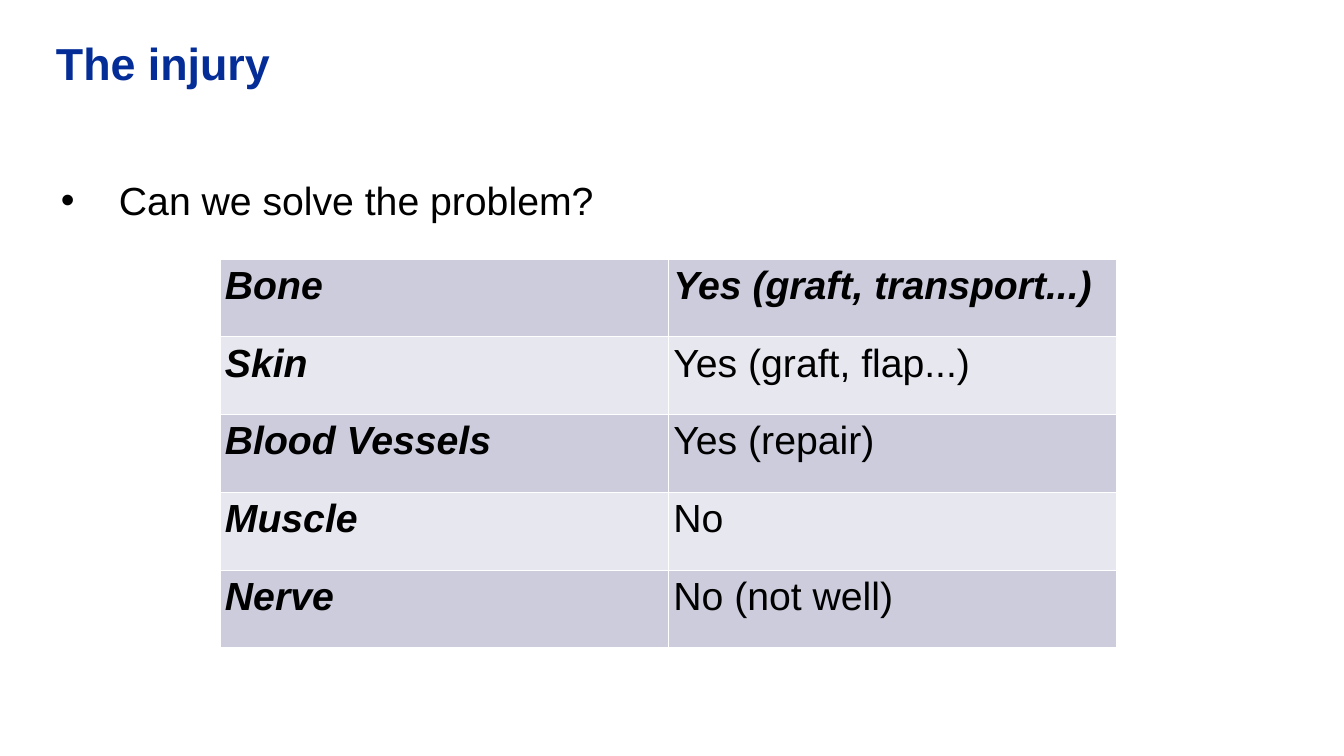
from pptx import Presentation
from pptx.dml.color import RGBColor
from pptx.enum.text import PP_ALIGN as Align
from pptx.oxml.ns import qn
from pptx.util import Emu, Pt
from lxml.etree import SubElement

SLIDE_W, SLIDE_H = 1344, 756
EMU_PER_PX = 914400 / 100.8
PAD = 5
BANDS = ("CCCCDD", "E7E7EF")
TITLE = {"size": Pt(32), "bold": True}
BODY = {"size": Pt(28), "bold": False}
STRONG = {"size": Pt(28), "bold": True, "italic": True}
ROWS = [
    ("Bone", "Yes (graft, transport...)"),
    ("Skin", "Yes (graft, flap...)"),
    ("Blood Vessels", "Yes (repair)"),
    ("Muscle", "No"),
    ("Nerve", "No (not well)"),
]


def px(n):
    return Emu(round(n * EMU_PER_PX))


def rgb(value):
    return RGBColor.from_string(value)


def set_margins(frame, left, top, right, bottom):
    margins = {"left": left, "top": top, "right": right, "bottom": bottom}
    for side, n in margins.items():
        setattr(frame, f"margin_{side}", px(n))


def write(p, text, style, color="000000"):
    r = p.add_run()
    r.text = text
    r.font.name = "Arial"
    r.font.color.rgb = rgb(color)
    for name, value in style.items():
        setattr(r.font, name, value)


def add_text_box(slide, box, margins):
    tf = slide.shapes.add_textbox(*map(px, box)).text_frame
    tf.word_wrap = True
    set_margins(tf, *margins)
    return tf.paragraphs[0]


def add_title(slide, box, text):
    p = add_text_box(slide, box, (0, 0, 0, 0))
    p.line_spacing = 0.9
    write(p, text, TITLE, "042D98")


def add_bullet(slide, box, text, indent=58):
    p = add_text_box(slide, box, (PAD, 9, PAD, PAD))
    pPr = p._p.get_or_add_pPr()
    pPr.set("marL", str(px(indent)))
    pPr.set("indent", str(-px(indent)))
    SubElement(pPr, qn("a:buFont"), typeface="Arial")
    SubElement(pPr, qn("a:buChar"), char="•")
    write(p, text, BODY)


def add_borders(cell, color="FFFFFF"):
    tcPr = cell._tc.get_or_add_tcPr()
    for i, side in enumerate(("lnL", "lnR", "lnT", "lnB")):
        ln = tcPr.makeelement(qn(f"a:{side}"), {"w": str(Pt(1))})
        fill = SubElement(ln, qn("a:solidFill"))
        SubElement(fill, qn("a:srgbClr"), val=color)
        tcPr.insert(i, ln)


def add_answers(slide, box, rows):
    left, top, width, height = box
    table = slide.shapes.add_table(len(rows), 2, *map(px, box)).table
    table.first_row = table.horz_banding = False
    for column in table.columns:
        column.width = px(width / 2)
    for i, texts in enumerate(rows):
        table.rows[i].height = px(height / len(rows))
        for j, text in enumerate(texts):
            cell = table.cell(i, j)
            set_margins(cell, PAD, PAD, PAD, PAD)
            cell.fill.solid()
            cell.fill.fore_color.rgb = rgb(BANDS[i % 2])
            add_borders(cell)
            p = cell.text_frame.paragraphs[0]
            p.alignment = Align.LEFT
            # The first row and first column are emphasised
            write(p, text, STRONG if i == 0 or j == 0 else BODY)


def main():
    prs = Presentation()
    prs.slide_width, prs.slide_height = px(SLIDE_W), px(SLIDE_H)
    slide = prs.slides.add_slide(prs.slide_layouts[6])

    # Heading and question
    add_title(slide, (56, 42, 1217, 126), "The injury")
    add_bullet(slide, (56, 167, 1217, 589), "Can we solve the problem?")

    # Tissue by tissue answers
    add_answers(slide, (220, 259, 897, 389), ROWS)

    prs.save("out.pptx")


if __name__ == "__main__":
    main()
